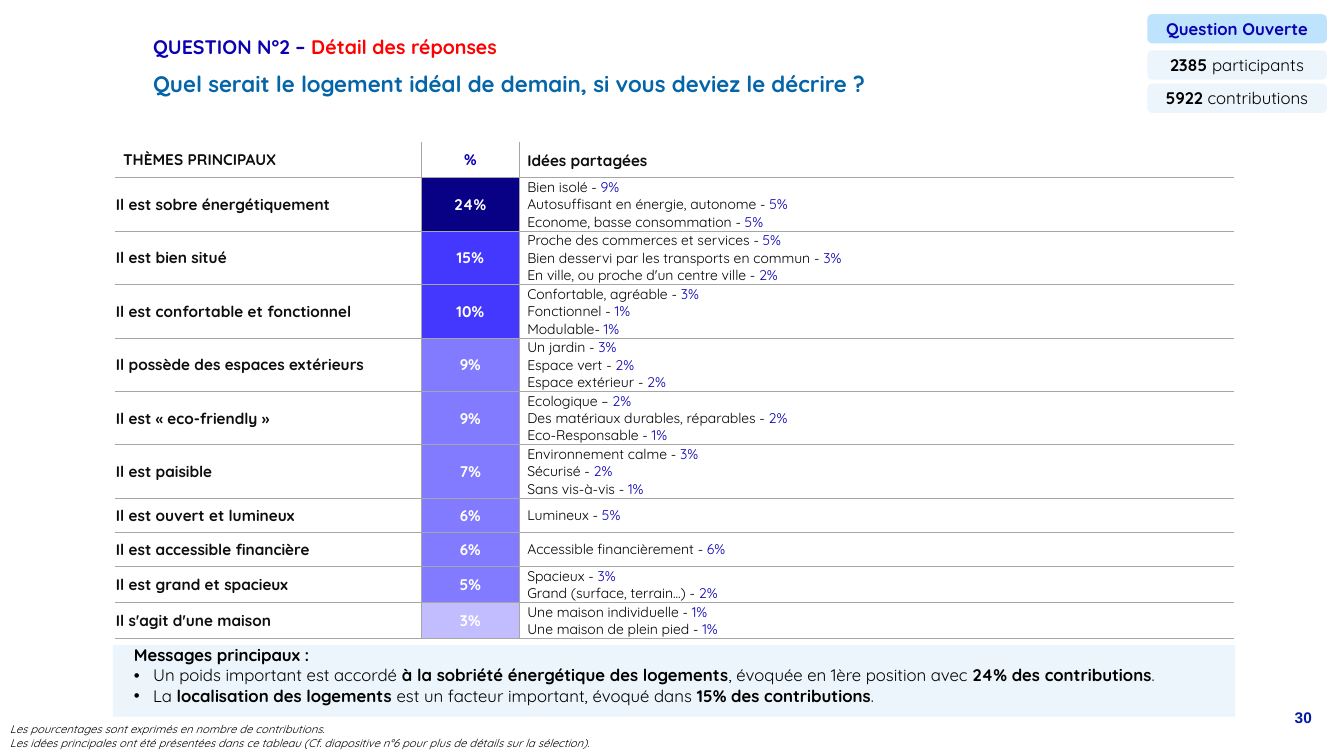
from lxml import etree
from pptx import Presentation
from pptx.dml.color import RGBColor
from pptx.enum.shapes import MSO_SHAPE
from pptx.enum.text import MSO_ANCHOR, PP_ALIGN
from pptx.oxml.ns import qn
from pptx.util import Inches, Pt

COLORS = {
    "navy": "0B00B2", "red": "FF0000", "blue": "0465A9", "page": "011CA3",
    "black": "000000", "ink": "0D0D0D", "white": "FFFFFF", "grid": "A5A6A5",
    "badge": "BDE3FD", "pale": "ECF5FB",
    "share_1": "080085", "share_2": "4438FF", "share_3": "827AFF", "share_4": "C1BDFF",
}
THEMES = [
    ("Il est sobre énergétiquement", "24%", "share_1",
     ["Bien isolé - |9%", "Autosuffisant en énergie, autonome - |5%", "Econome, basse consommation - |5%"]),
    ("Il est bien situé", "15%", "share_2",
     ["Proche des commerces et services - |5%", "Bien desservi par les transports en commun - |3%",
      "En ville, ou proche d'un centre ville - |2%"]),
    ("Il est confortable et fonctionnel", "10%", "share_2",
     ["Confortable, agréable - |3%", "Fonctionnel - |1%", "Modulable- |1%"]),
    ("Il possède des espaces extérieurs", "9%", "share_3",
     ["Un jardin - |3%", "Espace vert - |2%", "Espace extérieur - |2%"]),
    ("Il est « eco-friendly »", "9%", "share_3",
     ["Ecologique – |2%", "Des matériaux durables, réparables - |2%", "Eco-Responsable - |1%"]),
    ("Il est paisible", "7%", "share_3",
     ["Environnement calme - |3%", "Sécurisé - |2%", "Sans vis-à-vis - |1%"]),
    ("Il est ouvert et lumineux", "6%", "share_3", ["Lumineux - |5%"]),
    ("Il est accessible financière", "6%", "share_3", ["Accessible financièrement - |6%"]),
    ("Il est grand et spacieux", "5%", "share_3",
     ["Spacieux - |3%", "Grand (surface, terrain...) - |2%"]),
    ("Il s'agit d'une maison", "3%", "share_4",
     ["Une maison individuelle - |1%", "Une maison de plein pied - |1%"]),
]


def write(frame, lines, size=11, color="black", bold=False, italic=False, font="Quicksand",
          align=PP_ALIGN.LEFT, anchor=MSO_ANCHOR.MIDDLE, spacing=None,
          second_color=None, second_bold=None, bullets_from=None):
    frame.word_wrap = True
    frame.vertical_anchor = anchor
    for number, line in enumerate(lines):
        paragraph = frame.add_paragraph() if number else frame.paragraphs[0]
        paragraph.alignment = align
        if spacing:
            paragraph.line_spacing = spacing
        if bullets_from is not None and number >= bullets_from:
            properties = paragraph._p.get_or_add_pPr()
            properties.set("marL", str(Inches(0.19)))
            properties.set("indent", str(-Inches(0.19)))
            etree.SubElement(properties, qn("a:buFont"), typeface="Arial")
            etree.SubElement(properties, qn("a:buChar"), char="•")
        for position, text in enumerate(line.split("|")):
            second = position % 2 == 1
            run = paragraph.add_run()
            run.text = text
            run.font.name = font
            run.font.size = Pt(size)
            run.font.italic = italic
            run.font.bold = second_bold if second and second_bold is not None else bold
            run_color = second_color if second and second_color else color
            run.font.color.rgb = RGBColor.from_string(COLORS[run_color])


def add_panel(kind, left, top, width, height, fill):
    shape = slide.shapes.add_shape(kind, Inches(left), Inches(top), Inches(width), Inches(height))
    shape.shadow.inherit = False
    shape.fill.solid()
    shape.fill.fore_color.rgb = RGBColor.from_string(COLORS[fill])
    shape.line.fill.background()
    return shape


presentation = Presentation()
presentation.slide_width = Inches(13.33)
presentation.slide_height = Inches(7.5)
slide = presentation.slides.add_slide(presentation.slide_layouts[6])

graphic_frame = slide.shapes.add_table(len(THEMES) + 1, 3, Inches(1.14), Inches(1.41),
                                       Inches(11.1), Inches(4.77))
table = graphic_frame.table
table.first_row = False
table.horz_banding = False
for style in graphic_frame._element.iter(qn("a:tableStyleId")):
    style.text = "{2D5ABB26-0587-4C30-8999-92F81FD0307C}"
for column, width in zip(table.columns, [3.04, 0.97, 7.09]):
    column.width = Inches(width)
for row, height in zip(table.rows, [0.35] + [0.5] * 6 + [0.34] * 3 + [0.33]):
    row.height = Inches(height)

rows = [("THÈMES PRINCIPAUX", "%", None, ["Idées partagées"])] + THEMES
for row_index, (theme, share, fill, ideas) in enumerate(rows):
    header = row_index == 0
    cells = [table.cell(row_index, column_index) for column_index in range(3)]
    for column_index, cell in enumerate(cells):
        side = 0.01 if column_index == 0 and not header else 0.08
        cell.margin_left = cell.margin_right = Inches(side)
        cell.margin_top = Inches(0.01 if column_index == 2 or not header else 0)
        cell.margin_bottom = 0
        cell.vertical_anchor = MSO_ANCHOR.MIDDLE
        borders = {"lnL": column_index > 0, "lnR": column_index < 2, "lnT": not header, "lnB": True}
        for edge, visible in borders.items():
            line = etree.SubElement(cell._tc.get_or_add_tcPr(), qn(f"a:{edge}"), w=str(Pt(0.25)))
            if visible:
                solid = etree.SubElement(line, qn("a:solidFill"))
                etree.SubElement(solid, qn("a:srgbClr"), val=COLORS["grid"])
            else:
                etree.SubElement(line, qn("a:noFill"))
        if column_index == 1 and fill:
            cell.fill.solid()
            cell.fill.fore_color.rgb = RGBColor.from_string(COLORS[fill])
        else:
            cell.fill.background()
    write(cells[0].text_frame, [theme], color="ink", bold=True, anchor=None)
    write(cells[1].text_frame, [share], color="navy" if header else "white", bold=True,
          align=PP_ALIGN.CENTER, anchor=None)
    write(cells[2].text_frame, ideas, size=11 if header else 10, color="ink" if header else "black",
          bold=header, second_color="navy", anchor=None)

badges = [
    (0.14, "badge", "Question Ouverte", "navy"),
    (0.5, "pale", "2385 |participants", "black"),
    (0.83, "pale", "5922 |contributions", "black"),
]
for top, fill, text, color in badges:
    badge = add_panel(MSO_SHAPE.ROUNDED_RECTANGLE, 11.38, top, 1.78, 0.29, fill)
    write(badge.text_frame, [text], size=12, color=color, bold=True, second_bold=False,
          align=PP_ALIGN.CENTER)
add_panel(MSO_SHAPE.RECTANGLE, 1.12, 6.4, 11.13, 0.71, "pale")

text_boxes = [
    (1.42, 0.34, 11.5, 0.27, ["QUESTION N°2 – |Détail des réponses"],
     dict(size=14, color="navy", bold=True, second_color="red", spacing=0.9)),
    (1.42, 0.54, 9.38, 0.61, ["Quel serait le logement idéal de demain, si vous deviez le décrire ?"],
     dict(size=16, color="blue", bold=True, spacing=0.9)),
    (1.23, 6.35, 10.76, 0.71,
     ["|Messages principaux :",
      "Un poids important est accordé |à la sobriété énergétique des logements|"
      ", évoquée en 1ère position avec |24% des contributions|.",
      "La |localisation des logements |est un facteur important, évoqué dans |15% des contributions|."],
     dict(size=12, second_bold=True, bullets_from=1, anchor=MSO_ANCHOR.TOP)),
    (0, 7.12, 7.37, 0.37,
     ["Les pourcentages sont exprimés en nombre de contributions.",
      "Les idées principales ont été présentées dans ce tableau "
      "(Cf. diapositive n°6 pour plus de détails sur la sélection)."],
     dict(size=8, italic=True, align=PP_ALIGN.JUSTIFY, anchor=MSO_ANCHOR.TOP)),
    (11.14, 6.98, 1.97, 0.52, ["30"],
     dict(color="page", bold=True, font="Arial", align=PP_ALIGN.RIGHT, anchor=MSO_ANCHOR.TOP)),
]
for left, top, width, height, lines, text_format in text_boxes:
    text_box = slide.shapes.add_textbox(Inches(left), Inches(top), Inches(width), Inches(height))
    write(text_box.text_frame, lines, **text_format)

presentation.save("out.pptx")
